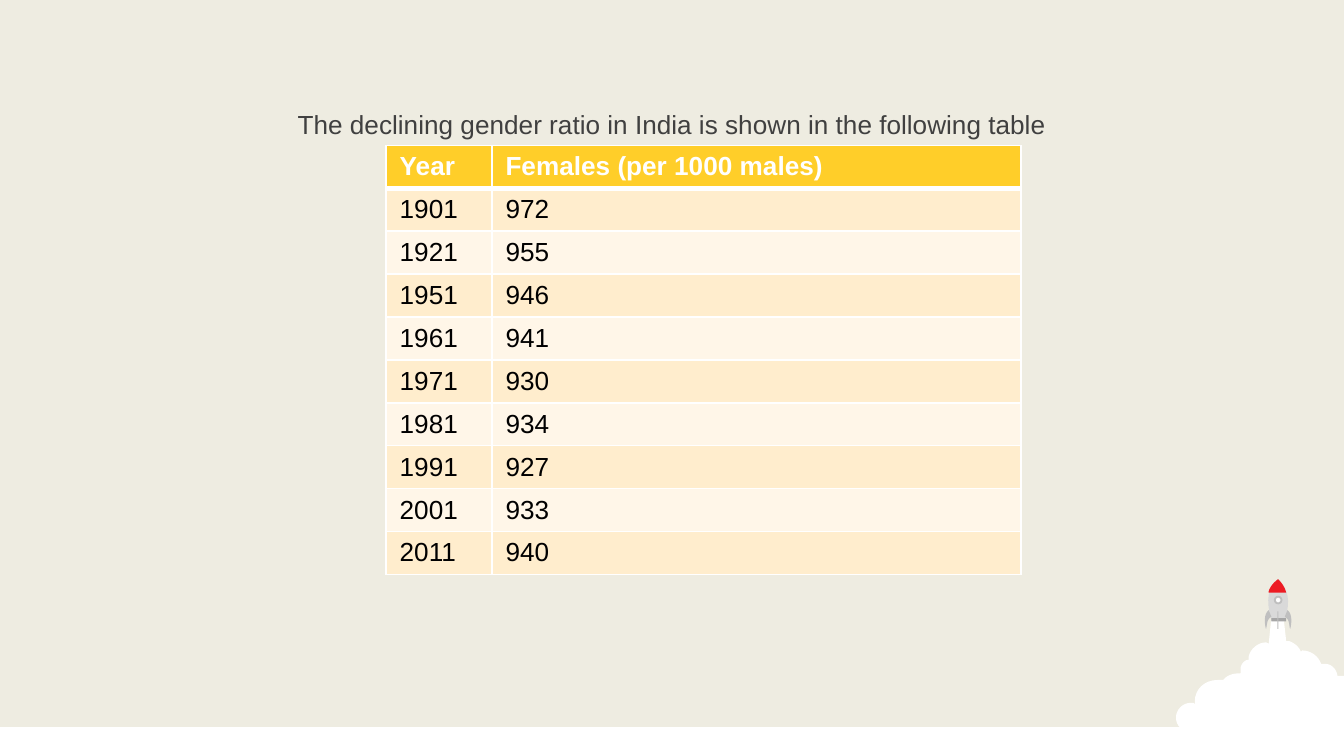
from collections import namedtuple
from dataclasses import dataclass

from lxml.etree import SubElement
from pptx import Presentation
from pptx.dml.color import RGBColor
from pptx.enum.shapes import MSO_SHAPE as Preset
from pptx.enum.text import MSO_ANCHOR as Anchor, MSO_AUTO_SIZE as AutoSize, PP_ALIGN as Align
from pptx.oxml.ns import qn
from pptx.util import Inches, Pt

Box = namedtuple("Box", "left top width height")


@dataclass(frozen=True)
class Theme:
    font: str = "Arial"
    size: int = 14
    background: str = "EEECE1"
    white: str = "FFFFFF"
    caption: str = "404040"
    ink: str = "000000"
    header: str = "FFCE29"
    bands: tuple = ("FFEDCD", "FFF6E8")
    nose: str = "ED1C24"
    hull: str = "D9D9D9"
    trim: str = "BFBFBF"
    nozzle: str = "A6A6A6"
    rule: int = 1
    header_rule: int = 3


THEME = Theme()

RATIOS = [
    ("Year", "Females (per 1000 males)"),
    ("1901", "972"), ("1921", "955"), ("1951", "946"),
    ("1961", "941"), ("1971", "930"), ("1981", "934"),
    ("1991", "927"), ("2001", "933"), ("2011", "940"),
]

# Outlines on the launch grid: a pair is a corner, six numbers are a Bézier curve.
LAUNCH_GRID = (125, 131)
CLOUD = [
    (71, 28), (80, 28), (82, 46), (84, 46), (87, 47, 90, 49, 92, 52), (93, 54), (94, 53),
    (100, 53, 106, 57, 108, 63), (111, 63), (115, 63, 119, 66, 120, 71), (120, 72),
    (125, 72), (125, 129), (59, 130), (38, 120), (11, 114), (5, 114, 0, 109, 0, 103),
    (0, 97, 5, 92, 11, 92), (13, 92), (14, 93), (14, 91), (14, 82, 21, 75, 31, 75),
    (35, 75), (36, 74), (39, 71, 43, 70, 48, 70), (48, 67), (48, 64, 50, 61, 53, 60),
    (54, 60), (54, 58), (55, 52, 61, 47, 67, 47), (69, 48),
]
HULL = [(71, 31), (69, 22, 65, 9, 76, 0), (87, 10, 83, 23, 81, 31)]
NOSE = [(76, 0), (79, 3, 81, 6, 82, 10), (69, 10), (69, 9), (70, 6, 72, 3, 76, 0)]
LEFT_FIN = [(69, 23), (71, 28), (67, 30, 68, 35, 67, 37), (66, 34, 65, 26, 69, 23)]
ROCKET_AXIS = 76


def rgb(color):
    return RGBColor.from_string(color)


def put_text(frame, text, color=THEME.ink, bold=False, align=Align.LEFT, size=THEME.size):
    paragraph = frame.paragraphs[0]
    paragraph.alignment = align
    run = paragraph.add_run()
    run.text = text
    run.font.name, run.font.size, run.font.bold = THEME.font, Pt(size), bold
    run.font.color.rgb = rgb(color)


def paint(shape, fill, line=None):
    shape.shadow.inherit = False
    shape.fill.solid()
    shape.fill.fore_color.rgb = rgb(fill)
    if line:
        shape.line.color.rgb = rgb(line)
        shape.line.width = Pt(THEME.rule)
    else:
        shape.line.fill.background()


def flatten(outline, steps=8):
    """Turn corners and Bézier curves into a list of points."""
    points = []
    for part in outline:
        if len(part) == 2:
            points.append(part)
            continue
        controls = [points[-1], part[:2], part[2:4], part[4:]]
        for step in range(1, steps + 1):
            t = step / steps
            weights = ((1 - t) ** 3, 3 * t * (1 - t) ** 2, 3 * t * t * (1 - t), t ** 3)
            points.append(tuple(
                sum(w * control[axis] for w, control in zip(weights, controls))
                for axis in (0, 1)))
    return points


def mirror(points, axis):
    return [(2 * axis - x, y) for x, y in points]


def draw_ground(slide, box):
    paint(slide.shapes.add_shape(Preset.RECTANGLE, *box), THEME.white)


def draw_launch(slide, box):
    """Draw the rocket rising from its cloud, on the launch grid."""
    columns, rows = LAUNCH_GRID
    unit_x, unit_y = box.width / columns, box.height / rows

    def place(x, y):
        return round(box.left + x * unit_x), round(box.top + y * unit_y)

    def outline(points, fill):
        corners = [place(*point) for point in points]
        builder = slide.shapes.build_freeform(*corners[0], scale=1.0)
        builder.add_line_segments(corners[1:], close=True)
        paint(builder.convert_to_shape(), fill)

    def preset(kind, x, y, width, height, fill, line=None):
        size = round(width * unit_x), round(height * unit_y)
        paint(slide.shapes.add_shape(kind, *place(x, y), *size), fill, line)

    fin = flatten(LEFT_FIN)
    outline(flatten(CLOUD), THEME.white)
    outline(flatten(HULL), THEME.hull)
    preset(Preset.RECTANGLE, 71, 29, 11, 2.5, THEME.nozzle)
    outline(flatten(NOSE), THEME.nose)
    preset(Preset.OVAL, 73.5, 13, 5, 5, THEME.white, THEME.trim)
    preset(Preset.RECTANGLE, 75.5, 24, 0.8, 13, THEME.trim)
    outline(fin, THEME.trim)
    outline(mirror(fin, ROCKET_AXIS), THEME.trim)


def place_caption(slide, box, text):
    slide.shapes.title.element.getparent().remove(slide.shapes.title.element)
    caption = slide.placeholders[1]
    caption.left, caption.top, caption.width, caption.height = box
    frame = caption.text_frame
    frame.word_wrap, frame.auto_size = True, AutoSize.NONE
    frame.vertical_anchor = Anchor.MIDDLE
    put_text(frame, text, color=THEME.caption, align=Align.CENTER)


def rule_cell(cell, **widths):
    """Add white borders; widths maps the sides L, R, T and B to points."""
    properties = cell._tc.get_or_add_tcPr()
    for side in "LRTB":
        border = SubElement(properties, qn(f"a:ln{side}"),
                            w=str(Pt(widths.get(side, THEME.rule))))
        fill = SubElement(border, qn("a:solidFill"))
        SubElement(fill, qn("a:srgbClr"), val=THEME.white)


def place_ratios(slide, box, records, shares):
    table = slide.shapes.add_table(len(records), len(shares), *box).table
    table.first_row = table.horz_banding = False
    for column, share in zip(table.columns, shares):
        column.width = round(box.width * share / sum(shares))
    for index, (row, record) in enumerate(zip(table.rows, records)):
        row.height = round(box.height / len(records))
        is_header = index == 0
        heavy = {0: {"B": THEME.header_rule}, 1: {"T": THEME.header_rule}}.get(index, {})
        for cell, value in zip(row.cells, record):
            rule_cell(cell, **heavy)
            cell.fill.solid()
            cell.fill.fore_color.rgb = rgb(
                THEME.header if is_header else THEME.bands[(index - 1) % 2])
            put_text(cell.text_frame, value, bold=is_header,
                     color=THEME.white if is_header else THEME.ink)


def main():
    deck = Presentation()
    deck.slide_width = Inches(10)
    deck.slide_height = deck.slide_width * 9 // 16

    def share(left, top, width, height):
        """Make a box from percentages of the slide's size."""
        across, down = deck.slide_width / 100, deck.slide_height / 100
        return Box(round(left * across), round(top * down),
                   round(width * across), round(height * down))

    slide = deck.slides.add_slide(deck.slide_layouts.get_by_name("Section Header"))
    slide.background.fill.solid()
    slide.background.fill.fore_color.rgb = rgb(THEME.background)
    draw_ground(slide, share(0, 96.18, 100, 3.82))
    draw_launch(slide, share(87.5, 76.62, 12.5, 23.29))
    place_caption(slide, share(0, 13.69, 100, 5.51),
                  "The declining gender ratio in India is shown in the following table")
    place_ratios(slide, share(28.74, 19.22, 47.25, 56.8), RATIOS, shares=(1, 5))
    deck.save("out.pptx")


if __name__ == "__main__":
    main()
